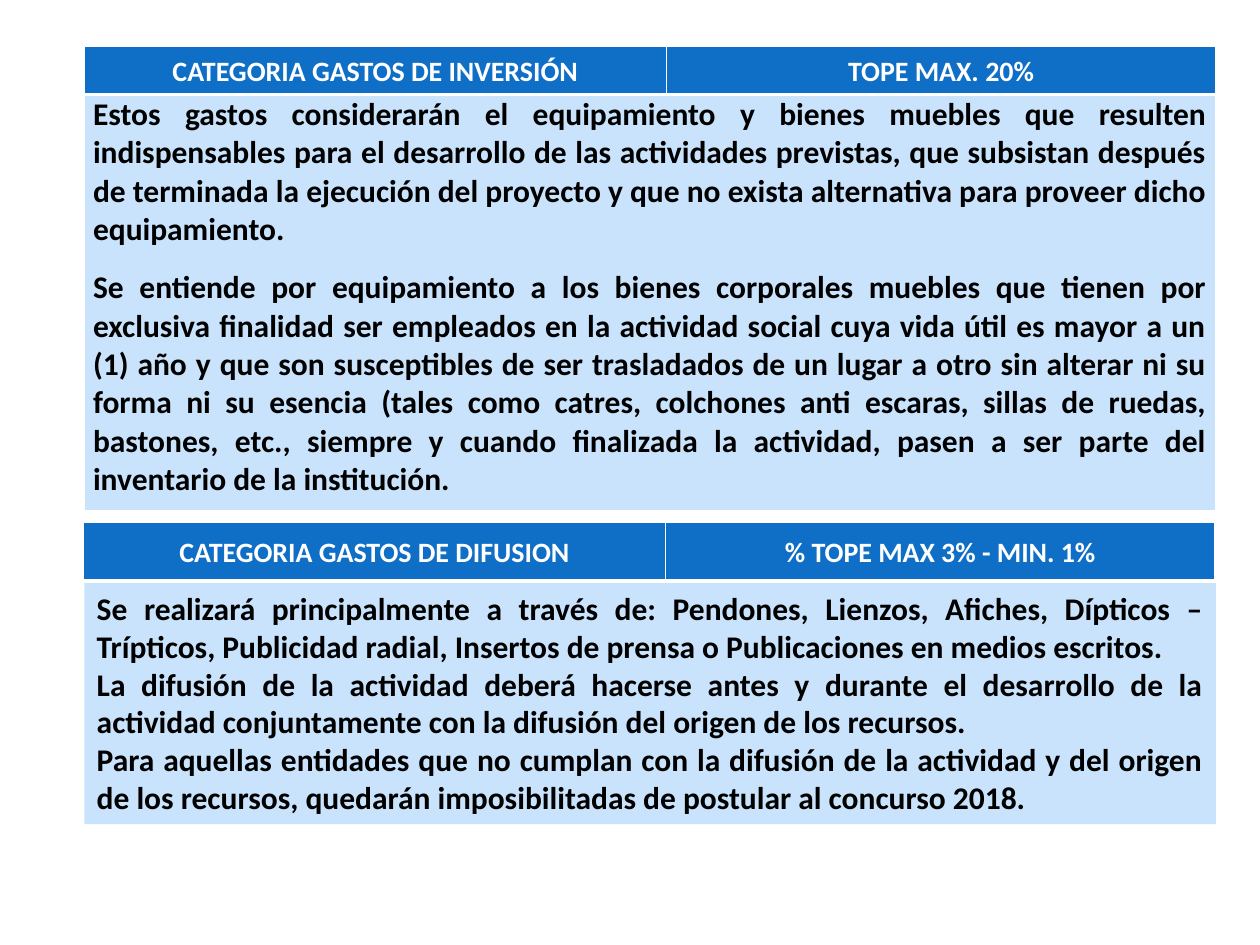
from lxml.etree import SubElement
from pptx import Presentation
from pptx.dml.color import RGBColor
from pptx.enum.text import MSO_ANCHOR as Anchor, PP_ALIGN as Align
from pptx.oxml.ns import qn
from pptx.util import Pt

BLUE = RGBColor(0x0F, 0x6F, 0xC6)
PALE = RGBColor(0xC8, 0xE3, 0xFB)
WHITE = RGBColor(0xFF, 0xFF, 0xFF)
BLACK = RGBColor(0, 0, 0)
FONT = "Calibri"

INVESTMENT_HEADER = ["CATEGORIA GASTOS DE INVERSIÓN", "TOPE MAX. 20%"]
INVESTMENT_TEXT = [
    "Estos gastos considerarán el equipamiento y bienes muebles que resulten "
    "indispensables para el desarrollo de las actividades previstas, que subsistan "
    "después de terminada la ejecución del proyecto y que no exista alternativa para "
    "proveer dicho equipamiento.",
    "Se entiende por equipamiento a los bienes corporales muebles que tienen por "
    "exclusiva finalidad ser empleados en la actividad social cuya vida útil es mayor "
    "a un (1) año y que son susceptibles de ser trasladados de un lugar a otro sin "
    "alterar ni su forma ni su esencia (tales como catres, colchones anti escaras, "
    "sillas de ruedas, bastones, etc., siempre y cuando finalizada la actividad, pasen "
    "a ser parte del inventario de la institución.",
]
OUTREACH_HEADER = ["CATEGORIA GASTOS DE DIFUSION", "% TOPE MAX 3% - MIN. 1%"]
OUTREACH_TEXT = [
    "Se realizará principalmente a través de: Pendones, Lienzos, Afiches, Dípticos – "
    "Trípticos, Publicidad radial, Insertos de prensa o Publicaciones en medios escritos.",
    "La difusión de la actividad deberá hacerse antes y durante el desarrollo de la "
    "actividad conjuntamente con la difusión del origen de los recursos.",
    "Para aquellas entidades que no cumplan con la difusión de la actividad y del origen "
    "de los recursos, quedarán imposibilitadas de postular al concurso 2018.",
]

LEFT = 48.2
HEADER_WIDTHS = [332.6, 314]
WIDTH = sum(HEADER_WIDTHS)
BORDERS = {"a:lnL": 1, "a:lnR": 1, "a:lnT": 1, "a:lnB": 3}


def write(frame, texts, size, color, align, line_spacing=None, gap=0):
    frame.word_wrap = True
    for index, text in enumerate(texts):
        paragraph = frame.paragraphs[0] if index == 0 else frame.add_paragraph()
        paragraph.text = text
        paragraph.alignment = align
        paragraph.line_spacing = line_spacing
        if index < len(texts) - 1:
            paragraph.space_after = Pt(gap)
        font = paragraph.font
        font.name, font.size, font.bold = FONT, Pt(size), True
        font.color.rgb = color


def add_row(slide, left, top, height, widths, fill, margin):
    table = slide.shapes.add_table(
        1, len(widths), Pt(left), Pt(top), Pt(sum(widths)), Pt(height)).table
    table.rows[0].height = Pt(height)
    for column, width in zip(table.columns, widths):
        column.width = Pt(width)
    cells = list(table.iter_cells())
    for cell in cells:
        cell.margin_left = cell.margin_right = Pt(margin)
        cell.margin_top = cell.margin_bottom = 0
        properties = cell._tc.get_or_add_tcPr()
        for tag, weight in BORDERS.items():
            line = SubElement(properties, qn(tag), w=str(Pt(weight)))
            solid = SubElement(line, qn("a:solidFill"))
            SubElement(solid, qn("a:srgbClr"), val=str(WHITE))
        cell.fill.solid()
        cell.fill.fore_color.rgb = fill
    return cells


def add_header(slide, left, top, height, titles):
    cells = add_row(slide, left, top, height, HEADER_WIDTHS, BLUE, 1.4)
    for cell, title in zip(cells, titles):
        cell.vertical_anchor = Anchor.MIDDLE
        write(cell.text_frame, [title], 16, WHITE, Align.CENTER, 1.07)


def main():
    presentation = Presentation()
    presentation.slide_width, presentation.slide_height = Pt(720), Pt(540)
    slide = presentation.slides.add_slide(presentation.slide_layouts[6])

    add_header(slide, LEFT, 26.2, 28.1, INVESTMENT_HEADER)
    body = add_row(slide, LEFT, 54.6, 238, [WIDTH], PALE, 5)[0]
    write(body.text_frame, INVESTMENT_TEXT, 18, BLACK, Align.JUSTIFY, gap=11)

    box = slide.shapes.add_textbox(Pt(LEFT), Pt(333), Pt(WIDTH), Pt(138))
    box.fill.solid()
    box.fill.fore_color.rgb = PALE
    write(box.text_frame, OUTREACH_TEXT, 18, BLACK, Align.JUSTIFY)
    add_header(slide, LEFT - 0.5, 298.2, 33.8, OUTREACH_HEADER)

    presentation.save("out.pptx")


if __name__ == "__main__":
    main()
